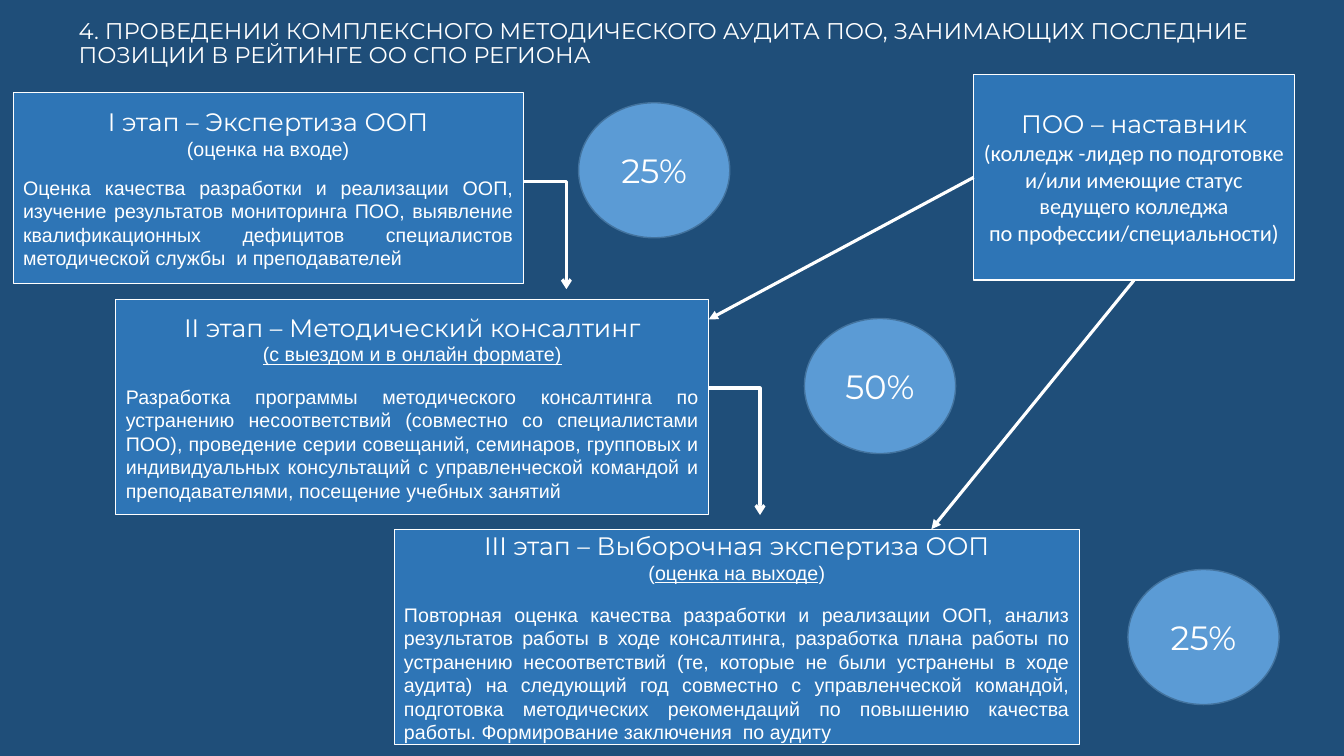
from lxml.etree import SubElement
from pptx import Presentation
from pptx.dml.color import RGBColor
from pptx.enum.shapes import MSO_CONNECTOR, MSO_SHAPE
from pptx.enum.text import MSO_ANCHOR, MSO_AUTO_SIZE, PP_ALIGN
from pptx.oxml.ns import qn
from pptx.util import Pt

BACKGROUND, BOX, CIRCLE, CIRCLE_LINE, WHITE = (
    "1F4E79", "2E75B6", "5B9BD5", "43739E", "FFFFFF")
HEADING_FONT = "Montserrat"

TITLE = ("4. ПРОВЕДЕНИИ КОМПЛЕКСНОГО МЕТОДИЧЕСКОГО АУДИТА ПОО, "
         "ЗАНИМАЮЩИХ ПОСЛЕДНИЕ ПОЗИЦИИ В РЕЙТИНГЕ ОО СПО РЕГИОНА")

# Box, heading, subtitle, underlined part of subtitle, gap, body
STAGES = [
    ((9.4, 66.2, 364.3, 136.1), "I этап – Экспертиза ООП",
     "(оценка на входе)", "", 11,
     "Оценка качества разработки и реализации ООП, изучение результатов "
     "мониторинга ПОО, выявление квалификационных дефицитов специалистов "
     "методической службы  и преподавателей"),
    ((82.8, 213.8, 423.4, 154.1), "II этап – Методический консалтинг",
     "(с выездом и в онлайн формате)", "(с выездом и в онлайн формате)", 13.3,
     "Разработка программы методического консалтинга по устранению "
     "несоответствий (совместно со специалистами ПОО), проведение серии "
     "совещаний, семинаров, групповых и индивидуальных консультаций с "
     "управленческой командой и преподавателями, посещение учебных занятий"),
    ((281.5, 378, 489.6, 154.1), "III этап – Выборочная экспертиза ООП",
     "(оценка на выходе)", "оценка на выходе", 13.3,
     "Повторная оценка качества разработки и реализации ООП, анализ "
     "результатов работы в ходе консалтинга, разработка плана работы по "
     "устранению несоответствий (те, которые не были устранены в ходе "
     "аудита) на следующий год совместно с управленческой командой, "
     "подготовка методических рекомендаций по повышению качества работы. "
     "Формирование заключения  по аудиту"),
]
MENTOR_LINES = ["(колледж -лидер по подготовке и/или имеющие статус",
                "ведущего колледжа", "по профессии/специальности)"]
SHARES = [(413.3, 73.4, "25%"), (574.6, 227.5, "50%"), (805.7, 406.8, "25%")]
ELBOWS = [(497.5, 277.2, 542.9, 367.9), (370.8, 129.6, 404.6, 206.6)]
MENTOR_ARROWS = [(695.5, 126.7, 506.2, 228.2), (810, 200.2, 665.3, 378)]


def rgb(color):
    return RGBColor.from_string(color)


def format_run(r, size, font, underline=None):
    r.font.size = Pt(size)
    r.font.name = font
    r.font.color.rgb = rgb(WHITE)
    r.font.underline = underline


def add_text(tf, text, size, font, align=PP_ALIGN.CENTER, gap=0, underlined=""):
    """Fill the empty first paragraph, or append one."""
    p = tf.paragraphs[0] if not tf.text else tf.add_paragraph()
    p.alignment = align
    p.space_before = Pt(gap)
    if underlined:
        for part in filter(None, text.partition(underlined)):
            r = p.add_run()
            r.text = part
            format_run(r, size, font, part == underlined or None)
    else:
        p.text = text
        format_run(p.runs[0], size, font)


def add_panel(s, kind, box, fill, line, width):
    """Draw a filled shape and give back its text frame."""
    sp = s.shapes.add_shape(kind, *map(Pt, box))
    sp.shadow.inherit = False
    sp.fill.solid()
    sp.fill.fore_color.rgb = rgb(fill)
    sp.line.color.rgb = rgb(line)
    sp.line.width = Pt(width)
    tf = sp.text_frame
    tf.word_wrap = True
    tf.vertical_anchor = MSO_ANCHOR.MIDDLE
    return tf


def add_arrow(s, ends, head, kind=MSO_CONNECTOR.STRAIGHT):
    cx = s.shapes.add_connector(kind, *map(Pt, ends))
    cx.line.color.rgb = rgb(WHITE)
    cx.line.width = Pt(2.25)
    SubElement(cx.line._get_or_add_ln(), qn("a:tailEnd"), type=head)
    sp_pr = cx._element.spPr
    SubElement(sp_pr, qn("a:effectLst"))
    if kind == MSO_CONNECTOR.ELBOW:  # a single corner: across, then down
        sp_pr.find(qn("a:prstGeom")).set("prst", "bentConnector2")


def add_title(s):
    sp = s.shapes.title
    sp.left, sp.top, sp.width, sp.height = map(Pt, (49, 9.4, 895.7, 44.6))
    tf = sp.text_frame
    tf.word_wrap = True
    tf.auto_size = MSO_AUTO_SIZE.NONE
    tf.vertical_anchor = MSO_ANCHOR.MIDDLE
    add_text(tf, TITLE, 16.2, HEADING_FONT, PP_ALIGN.LEFT)
    tf.paragraphs[0].line_spacing = 0.9


def add_stage(s, box, heading, subtitle, underlined, gap, body):
    tf = add_panel(s, MSO_SHAPE.RECTANGLE, box, BOX, WHITE, 0.75)
    add_text(tf, heading, 18, HEADING_FONT)
    add_text(tf, subtitle, 14, "Arial", underlined=underlined)
    add_text(tf, body, 14, "Arial", PP_ALIGN.JUSTIFY, gap)


def add_mentor(s):
    tf = add_panel(s, MSO_SHAPE.RECTANGLE, (695.5, 53.3, 229, 146.9),
                   BOX, WHITE, 1)
    add_text(tf, "ПОО – наставник", 18, HEADING_FONT)
    for line in MENTOR_LINES:
        add_text(tf, line, 16, "Calibri")


def add_share(s, left, top, share):
    tf = add_panel(s, MSO_SHAPE.OVAL, (left, top, 108, 96.5),
                   CIRCLE, CIRCLE_LINE, 1)
    add_text(tf, share, 24, HEADING_FONT)


def main():
    prs = Presentation()
    prs.slide_width, prs.slide_height = Pt(960), Pt(540)
    s = prs.slides.add_slide(prs.slide_layouts[5])
    s.background.fill.solid()
    s.background.fill.fore_color.rgb = rgb(BACKGROUND)

    # Elbow arrows start behind the stage boxes
    for ends in ELBOWS:
        add_arrow(s, ends, "arrow", MSO_CONNECTOR.ELBOW)

    # Title, stages, mentor and shares
    add_title(s)
    for stage in STAGES:
        add_stage(s, *stage)
    add_mentor(s)
    for share in SHARES:
        add_share(s, *share)

    # Arrows from the mentor to the stages
    for ends in MENTOR_ARROWS:
        add_arrow(s, ends, "triangle")
    prs.save("out.pptx")


if __name__ == "__main__":
    main()
